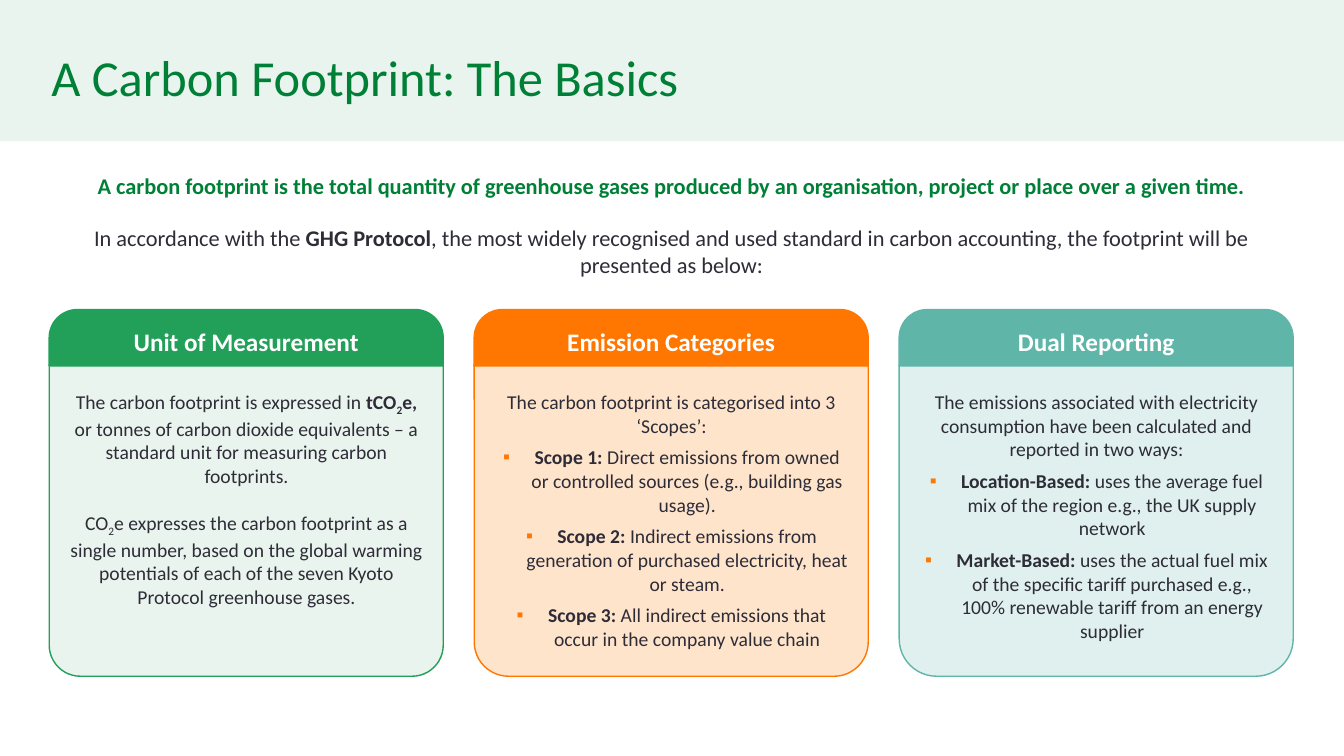
from lxml.etree import SubElement
from pptx import Presentation
from pptx.dml.color import RGBColor
from pptx.enum.shapes import MSO_SHAPE
from pptx.enum.text import MSO_ANCHOR, PP_ALIGN
from pptx.oxml.ns import qn
from pptx.util import Cm, Pt

FONT = "Calibri"
COLOURS = {
    "title": "008037", "text": "2D2C37", "white": "FFFFFF", "bullet": "FF7600",
    "green": "229F58", "pale green": "EAF4EE",
    "orange": "FF7600", "pale orange": "FFE4CC",
    "teal": "5EB5A8", "pale teal": "DFF0EE",
}

INTRO = [
    ("*A carbon footprint is the total quantity of greenhouse gases produced by "
     "an organisation, project or place over a given time.*", "title"),
    ("In accordance with the *GHG Protocol*, the most widely recognised and used "
     "standard in carbon accounting, the footprint will be presented as below:", "text"),
]

# Heading, colour, corner rounding, opening paragraphs, bullets
CARDS = [
    ("Unit of Measurement", "green", 0.1,
     ["The carbon footprint is expressed in *tCO~2~e,* or tonnes of carbon dioxide "
      "equivalents – a standard unit for measuring carbon footprints.",
      "CO~2~e expresses the carbon footprint as a single number, based on the global "
      "warming potentials of each of the seven Kyoto Protocol greenhouse gases."],
     []),
    ("Emission Categories", "orange", 0.11,
     ["The carbon footprint is categorised into 3 ‘Scopes’:"],
     ["*Scope 1:* Direct emissions from owned or controlled sources "
      "(e.g., building gas usage).",
      "*Scope 2:* Indirect emissions from generation of purchased electricity, "
      "heat or steam.",
      "*Scope 3:* All indirect emissions that occur in the company value chain"]),
    ("Dual Reporting", "teal", 0.12,
     ["The emissions associated with electricity consumption have been calculated "
      "and reported in two ways:"],
     ["*Location-Based:* uses the average fuel mix of the region e.g., "
      "the UK supply network",
      "*Market-Based:* uses the actual fuel mix of the specific tariff purchased "
      "e.g., 100% renewable tariff from an energy supplier"]),
]


def rgb(name):
    return RGBColor.from_string(COLOURS[name])


def format_font(font, size, colour, bold=False):
    font.name = FONT
    font.size = Pt(size)
    font.bold = bold
    font.color.rgb = rgb(colour)


def add_marked_text(p, text, size, colour):
    """Write centred text in which *…* is bold and ~…~ is subscript."""
    p.alignment = PP_ALIGN.CENTER
    for i, part in enumerate(text.split("*")):
        for j, piece in enumerate(part.split("~")):
            if piece:
                r = p.add_run()
                r.text = piece
                format_font(r.font, size, colour, bold=i % 2 == 1)
                if j % 2:
                    r._r.get_or_add_rPr().set("baseline", "-25000")


def add_bullet(p):
    pPr = p._p.get_or_add_pPr()
    pPr.set("marL", str(Cm(0.79)))
    pPr.set("indent", str(-Cm(0.79)))
    colour = SubElement(pPr, qn("a:buClr"))
    SubElement(colour, qn("a:srgbClr"), val=COLOURS["bullet"])
    SubElement(pPr, qn("a:buFont"), typeface="Arial")
    SubElement(pPr, qn("a:buChar"), char="▪")


def next_paragraph(tf):
    """Return the empty first paragraph, or a new one."""
    return tf.add_paragraph() if tf.paragraphs[0].runs else tf.paragraphs[0]


def add_text_frame(s, left, top, width, height):
    tf = s.shapes.add_textbox(Cm(left), Cm(top), Cm(width), Cm(height)).text_frame
    tf.word_wrap = True
    return tf


def add_panel(s, kind, left, top, width, height, fill, line=None):
    sp = s.shapes.add_shape(kind, Cm(left), Cm(top), Cm(width), Cm(height))
    sp.shadow.inherit = False
    sp.fill.solid()
    sp.fill.fore_color.rgb = rgb(fill)
    if line:
        sp.line.color.rgb = rgb(line)
        sp.line.width = Pt(1)
    else:
        sp.line.fill.background()
    return sp


def add_title(s, text):
    band = add_panel(s, MSO_SHAPE.RECTANGLE, 0, 0, 33.87, 3.56, "pale green")
    title = s.shapes.title
    band._element.getparent().insert(2, band._element)
    title.left, title.top, title.width, title.height = Cm(1.04), Cm(1.19), Cm(31.78), Cm(1.68)
    tf = title.text_frame
    tf.text = text
    tf.vertical_anchor = MSO_ANCHOR.MIDDLE
    p = tf.paragraphs[0]
    p.alignment = PP_ALIGN.LEFT
    p.line_spacing = 0.9
    format_font(p.runs[0].font, 36, "title")


def add_intro(s):
    tf = add_text_frame(s, 0.91, 4.22, 32.03, 2.95)
    for text, colour in INTRO:
        p = next_paragraph(tf)
        p.space_after = Pt(18)
        add_marked_text(p, text, 16, colour)


def add_card(s, left, heading, colour, rounding, paragraphs, bullets):
    kind = MSO_SHAPE.ROUND_2_SAME_RECTANGLE
    body = add_panel(s, kind, left, 9.19, 9.93, 7.85, f"pale {colour}", colour)
    body.rotation = 180
    body.adjustments[0] = rounding
    head = add_panel(s, kind, left, 7.8, 9.93, 1.42, colour, colour)
    head.adjustments[0] = 0.5
    head.text_frame.vertical_anchor = MSO_ANCHOR.MIDDLE
    add_marked_text(head.text_frame.paragraphs[0], f"*{heading}*", 18, "white")

    tf = add_text_frame(s, left + 0.25, 9.7, 9.45, 6.7)
    for i, text in enumerate(paragraphs):
        p = next_paragraph(tf)
        if i:
            p.space_before = Pt(17)
        add_marked_text(p, text, 14, "text")
    for text in bullets:
        p = next_paragraph(tf)
        add_bullet(p)
        p.space_before = Pt(6)
        add_marked_text(p, text, 14, "text")


def main():
    prs = Presentation()
    prs.slide_width, prs.slide_height = Cm(33.87), Cm(19.05)
    s = prs.slides.add_slide(prs.slide_layouts[5])
    add_title(s, "A Carbon Footprint: The Basics")
    add_intro(s)
    for i, card in enumerate(CARDS):
        add_card(s, 1.24 + i * 10.71, *card)
    prs.save("out.pptx")


if __name__ == "__main__":
    main()
